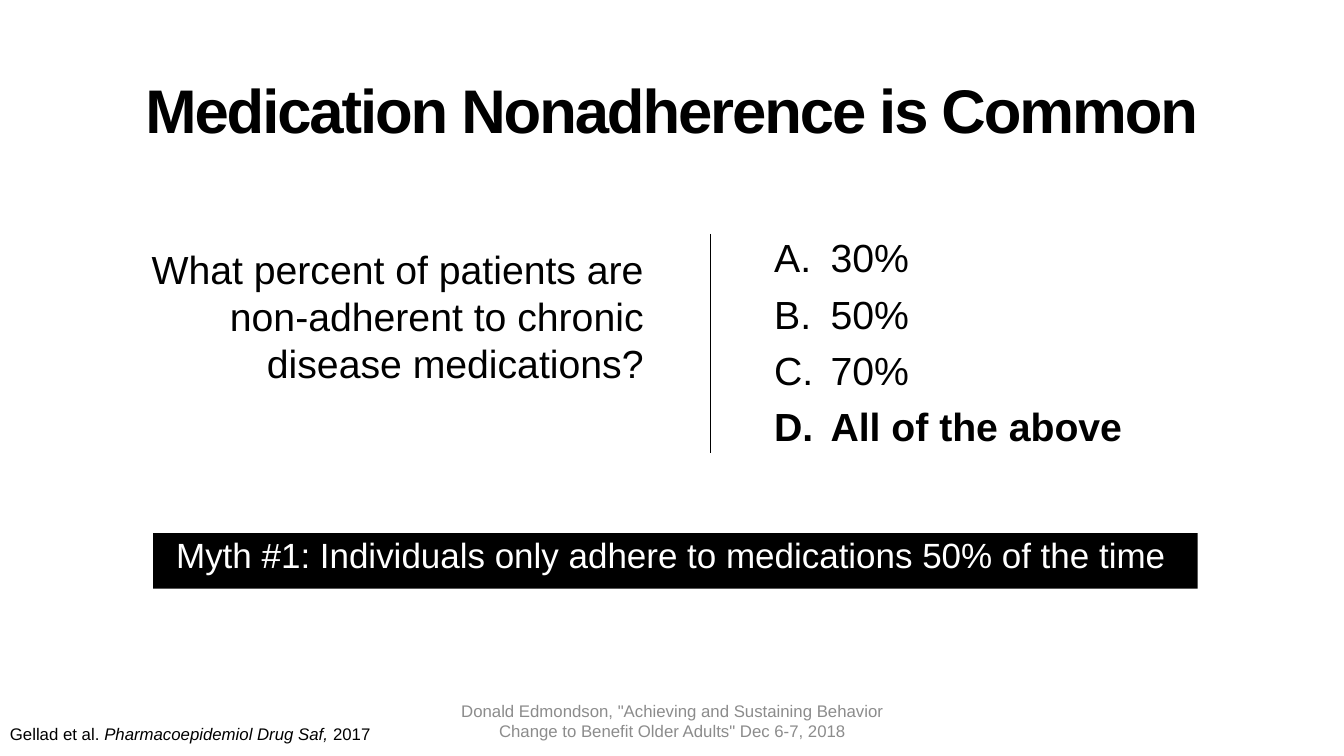
import pptx
import pptx.util
import pptx.dml.color
import pptx.enum.shapes
import pptx.enum.text
import lxml.etree
from pptx.oxml.ns import qn

SCALE = 9144  # EMU per px, 100 px to the inch
BLACK, WHITE, GREY = "000000", "FFFFFF", "8C8C8C"
ALIGN = pptx.enum.text.PP_ALIGN
ANCHOR = pptx.enum.text.MSO_ANCHOR


def px(n):
    return pptx.util.Emu(n * SCALE)


def rgb(value):
    return pptx.dml.color.RGBColor.from_string(value)


def add_run(p, text, size, color=BLACK, bold=False, italic=False):
    r = p.add_run()
    r.text = text
    r.font.name = "Arial"
    r.font.size = pptx.util.Pt(size)
    r.font.bold = bold
    r.font.italic = italic
    r.font.color.rgb = rgb(color)
    return r


def add_box(s, x, y, w, h, anchor=ANCHOR.TOP, wrap=True):
    tf = s.shapes.add_textbox(px(x), px(y), px(w), px(h)).text_frame
    tf.word_wrap = wrap
    tf.vertical_anchor = anchor
    return tf


def format_paragraph(p, align=ALIGN.LEFT, line=1.0, before=0, after=0):
    p.alignment = align
    p.line_spacing = line
    p.space_before = pptx.util.Pt(before)
    p.space_after = pptx.util.Pt(after)


def add_letter(p, indent):
    pPr = p._p.get_or_add_pPr()
    pPr.set("marL", str(px(indent)))
    pPr.set("indent", str(-px(indent)))
    lxml.etree.SubElement(pPr, qn("a:buFont"), typeface="+mj-lt")
    lxml.etree.SubElement(pPr, qn("a:buAutoNum"), type="alphaUcPeriod")


def add_choices(s, x, y, w, h, choices, answer):
    tf = add_box(s, x, y, w, h)
    for i, choice in enumerate(choices):
        p = tf.add_paragraph() if i else tf.paragraphs[0]
        format_paragraph(p, line=0.9, before=10)
        add_letter(p, 56)
        add_run(p, choice, 28, bold=choice == answer)


def add_banner(s, x, y, w, h, text):
    sp = s.shapes.add_shape(pptx.enum.shapes.MSO_SHAPE.RECTANGLE,
                            px(x), px(y), px(w), px(h))
    sp.shadow.inherit = False
    sp.fill.solid()
    sp.fill.fore_color.rgb = rgb(BLACK)
    sp.line.fill.background()
    tf = sp.text_frame
    tf.word_wrap = True
    tf.vertical_anchor = ANCHOR.TOP
    p = tf.paragraphs[0]
    format_paragraph(p, ALIGN.CENTER, 0.9, 10, 6)
    add_run(p, text, 25, WHITE)


def add_divider(s, x, top, bottom):
    line = s.shapes.add_connector(pptx.enum.shapes.MSO_CONNECTOR.STRAIGHT,
                                  px(x), px(top), px(x), px(bottom))
    line.line.color.rgb = rgb(BLACK)
    line.line.width = pptx.util.Pt(0.5)
    lxml.etree.SubElement(line._element.spPr, qn("a:effectLst"))


def main():
    prs = pptx.Presentation()
    prs.slide_width, prs.slide_height = px(1333), px(750)
    s = prs.slides.add_slide(prs.slide_layouts[6])

    # Title
    p = add_box(s, 0, 40, 1333, 145, ANCHOR.MIDDLE).paragraphs[0]
    format_paragraph(p, ALIGN.CENTER, 0.9)
    r = add_run(p, "Medication Nonadherence is Common", 44, bold=True)
    r._r.get_or_add_rPr().set("spc", "-150")

    # Question and choices
    p = add_box(s, 104, 238, 544, 177).paragraphs[0]
    format_paragraph(p, ALIGN.RIGHT, before=10)
    add_run(p, "What percent of patients are non-adherent to chronic "
               "disease medications?", 28)
    add_choices(s, 758, 232, 430, 242,
                ["30%", "50%", "70%", "All of the above"], "All of the above")
    add_divider(s, 705, 232, 449)

    # Myth banner
    add_banner(s, 152, 529, 1036, 55,
               "Myth #1: Individuals only adhere to medications 50% of the time ")

    # Citation
    tf = add_box(s, 0, 713, 381, 30, wrap=False)
    tf.auto_size = pptx.enum.text.MSO_AUTO_SIZE.SHAPE_TO_FIT_TEXT
    p = tf.paragraphs[0]
    add_run(p, "Gellad et al. ", 12)
    add_run(p, "Pharmacoepidemiol Drug Saf,", 12, italic=True)
    add_run(p, " 2017", 12)

    # Footer
    p = add_box(s, 442, 695, 450, 40, ANCHOR.MIDDLE).paragraphs[0]
    format_paragraph(p, ALIGN.CENTER)
    add_run(p, 'Donald Edmondson, "Achieving and Sustaining Behavior Change '
               'to Benefit Older Adults" Dec 6-7, 2018', 12, GREY)

    prs.save("out.pptx")


if __name__ == "__main__":
    main()
